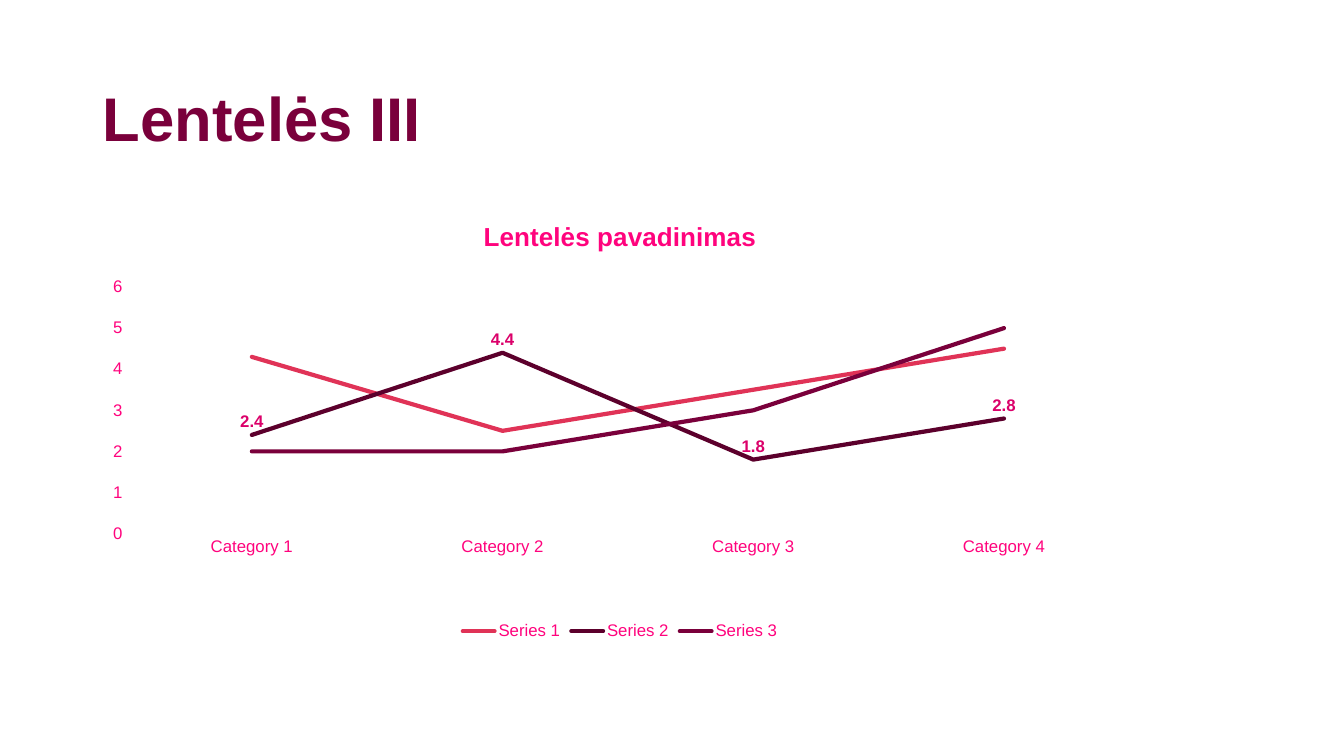
from dataclasses import dataclass

from lxml.etree import SubElement
from pptx import Presentation
from pptx.chart.data import CategoryChartData
from pptx.dml.color import RGBColor
from pptx.enum.chart import XL_CHART_TYPE, XL_LABEL_POSITION, XL_LEGEND_POSITION, XL_TICK_MARK
from pptx.enum.text import MSO_ANCHOR, MSO_AUTO_SIZE, PP_ALIGN
from pptx.oxml.ns import qn
from pptx.util import Inches, Pt


@dataclass(frozen=True)
class Theme:
    font: str = "Arial"
    wine: str = "7A003B"
    pink: str = "FF037D"
    label: str = "DB006A"
    series: tuple = ("E03357", "5C002C", "7A003B")
    title_size: float = 44
    chart_title_size: float = 18.6
    axis_size: float = 12
    base_size: float = 10
    line_width: float = 3


class SlideBuilder:
    def __init__(self, presentation, theme):
        self.theme = theme
        self.slide = presentation.slides.add_slide(presentation.slide_layouts[5])

    def style(self, font, size, color, bold=False):
        font.name = self.theme.font
        font.size = Pt(size)
        font.bold = bold
        font.color.rgb = RGBColor.from_string(color)

    def title(self, text, left, top, width, height):
        title = self.slide.shapes.title
        title.left, title.top = Inches(left), Inches(top)
        title.width, title.height = Inches(width), Inches(height)
        frame = title.text_frame
        frame.text = text
        frame.word_wrap = True
        frame.auto_size = MSO_AUTO_SIZE.NONE
        frame.vertical_anchor = MSO_ANCHOR.TOP
        frame.margin_top = Inches(0.1)
        heading = frame.paragraphs[0]
        heading.alignment = PP_ALIGN.LEFT
        heading.line_spacing = 0.9
        self.style(heading.font, self.theme.title_size, self.theme.wine, bold=True)

    def line_chart(self, heading, categories, series_values, left, top, width, height):
        theme = self.theme
        data = CategoryChartData()
        data.categories = categories
        for name, values in series_values.items():
            data.add_series(name, values)
        chart = self.slide.shapes.add_chart(
            XL_CHART_TYPE.LINE, Inches(left), Inches(top), Inches(width), Inches(height), data
        ).chart
        self.style(chart.font, theme.base_size, theme.wine)

        chart.has_title = True
        chart.chart_title.include_in_layout = False
        chart.chart_title.text_frame.text = heading
        self.style(chart.chart_title.text_frame.paragraphs[0].font,
                   theme.chart_title_size, theme.pink, bold=True)

        chart.has_legend = True
        chart.legend.position = XL_LEGEND_POSITION.BOTTOM
        chart.legend.include_in_layout = False
        self.style(chart.legend.font, theme.axis_size, theme.pink)

        for axis in (chart.category_axis, chart.value_axis):
            axis.has_major_gridlines = False
            axis.major_tick_mark = axis.minor_tick_mark = XL_TICK_MARK.NONE
            axis.format.line.fill.background()
            self.style(axis.tick_labels.font, theme.axis_size, theme.pink)
        chart.value_axis.minimum_scale = 0
        chart.value_axis.maximum_scale = 6
        chart.value_axis.major_unit = 1

        for series, color in zip(chart.plots[0].series, theme.series):
            series.smooth = False
            line = series.format.line
            line.color.rgb = RGBColor.from_string(color)
            line.width = Pt(theme.line_width)
            series.format.line._get_or_add_ln().set("cap", "rnd")
        return chart

    def value_labels(self, series):
        labels = series.data_labels
        labels.show_value = True
        labels.position = XL_LABEL_POSITION.ABOVE
        self.style(labels.font, self.theme.axis_size, self.theme.label, bold=True)

    def plot_area(self, chart, **fractions):
        """Fix the inner plot area as fractions of the chart's size."""
        area = chart.plots[0]._element.getparent()
        layout = area.find(qn("c:layout"))
        if layout is None:
            layout = SubElement(area, qn("c:layout"))
            area.insert(0, layout)
        manual = SubElement(layout, qn("c:manualLayout"))
        settings = {"layoutTarget": "inner", "xMode": "edge", "yMode": "edge", **fractions}
        for tag, value in settings.items():
            SubElement(manual, qn(f"c:{tag}")).set("val", str(value))


def main():
    presentation = Presentation()
    presentation.slide_width, presentation.slide_height = Inches(13.33), Inches(7.5)
    builder = SlideBuilder(presentation, Theme())
    builder.title("Lentelės III", 0.92, 0.78, 9.77, 1.45)
    chart = builder.line_chart(
        "Lentelės pavadinimas",
        [f"Category {number}" for number in range(1, 5)],
        {
            "Series 1": (4.3, 2.5, 3.5, 4.5),
            "Series 2": (2.4, 4.4, 1.8, 2.8),
            "Series 3": (2, 2, 3, 5),
        },
        0.92, 1.99, 10.46, 4.4,
    )
    builder.value_labels(chart.plots[0].series[1])
    builder.plot_area(chart, x=0.032, y=0.195, w=0.951, h=0.556)
    presentation.save("out.pptx")


if __name__ == "__main__":
    main()
